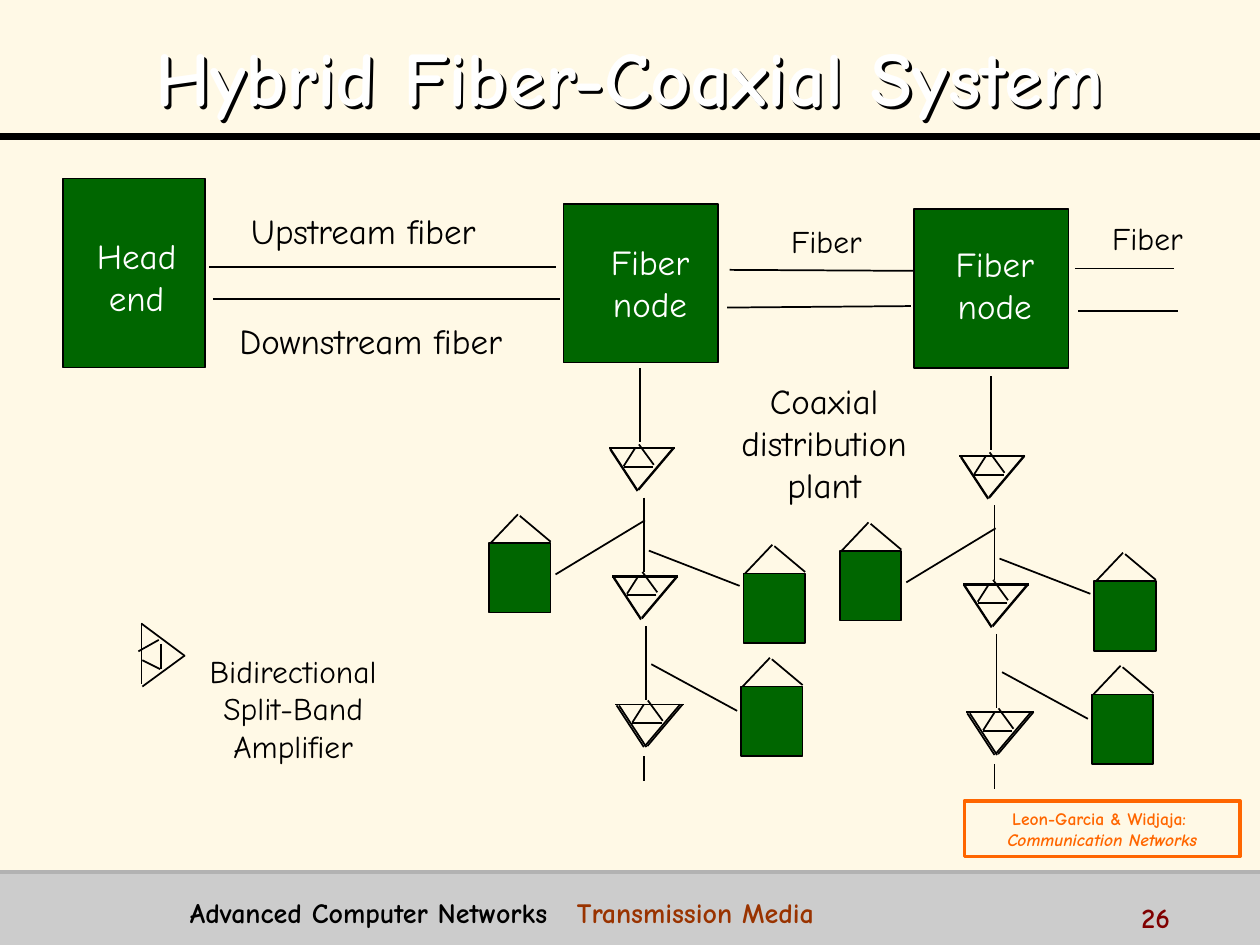
from lxml.etree import SubElement
from pptx import Presentation
from pptx.dml.color import RGBColor
from pptx.enum.shapes import MSO_CONNECTOR, MSO_SHAPE
from pptx.enum.text import MSO_ANCHOR, MSO_AUTO_SIZE, PP_ALIGN
from pptx.oxml.ns import qn
from pptx.util import Cm, Pt

CREAM = RGBColor(0xFF, 0xF9, 0xE6)
BLACK = RGBColor(0, 0, 0)
WHITE = RGBColor(0xFF, 0xFF, 0xFF)
GREEN = RGBColor(0, 0x66, 0)
SILVER = RGBColor(0xCC, 0xCC, 0xCC)
GREY = RGBColor(0xB2, 0xB2, 0xB2)
RUST = RGBColor(0x99, 0x33, 0)
MAROON = RGBColor(0x80, 0, 0)
ORANGE = RGBColor(0xFF, 0x66, 0)

PLANT_ORIGINS = [(0, 0), (7.07, 0.16)]
TRUNK = [
    (12.9, 7.42, 12.9, 8.92),
    (12.98, 10.03, 12.98, 11.53),
    (13.02, 12.62, 13.02, 14.12),
    (12.98, 15.24, 12.98, 15.75),
]
DROPS = [
    (14.86, 14.33, 13.13, 13.39),
    (11.2, 11.58, 13, 10.49),
    (13.08, 11.1, 14.91, 11.81),
]
OUTER_TRIANGLE = [(1.33, 0, 0, 0), (1.31, 0, 0.6, 0.84), (0.03, 0.02, 0.58, 0.86)]
INNER_TRIANGLE = [(0.89, 0.38, 0.3, 0.38), (0.91, 0.33, 0.61, -0.08), (0.53, 0, 0.3, 0.36)]
FORWARD_AMPLIFIERS = [(12.27, 9.02), (12.34, 11.63), (12.4, 14.2)]
REVERSE_AMPLIFIERS = [(12.27, 9.04), (12.34, 11.61), (12.45, 14.2)]
HOUSES = [(9.86, 10.95), (14.99, 11.56), (14.94, 13.84)]
ROOF = [(0.03, 0, 0.58, -0.58), (0.62, -0.55, 1.24, -0.03)]
FIBERS = [
    (4.22, 5.38, 11.2, 5.38),
    (4.29, 6.03, 11.28, 6.03),
    (14.71, 5.44, 18.42, 5.46),
    (14.66, 6.2, 18.36, 6.17),
    (21.67, 5.41, 23.67, 5.41),
    (21.74, 6.27, 23.75, 6.27),
]
LEGEND_AMPLIFIER = [
    (2.85, 12.55, 2.85, 13.79),
    (2.85, 12.57, 3.71, 13.21),
    (2.87, 13.84, 3.73, 13.21),
    (3.25, 12.98, 3.25, 13.49),
    (3.2, 12.9, 2.79, 13.13),
    (2.87, 13.31, 3.23, 13.49),
]
STATIONS = [(1.27, 3.6, 2.87, 3.81), (11.36, 4.11, 3.12, 3.2), (18.42, 4.22, 3.12, 3.2)]
LABELS = [
    (["Head", "end"], (1.6, 4.6, 2.31, 1.96), 20, WHITE),
    (["Fiber", "node"], (11.96, 4.72, 2.29, 1.96), 20, WHITE),
    (["Fiber", "node"], (18.91, 4.76, 2.29, 1.96), 20, WHITE),
    (["Upstream fiber"], (4.8, 4.09, 5.05, 1.14), 20, BLACK),
    (["Downstream fiber"], (4.48, 6.32, 5.99, 1.14), 20, BLACK),
    (["Coaxial", "distribution", "plant"], (14.62, 7.52, 3.99, 2.92), 20, BLACK),
    (["Bidirectional", "Split-Band", "Amplifier"], (3.88, 13.01, 4.06, 2.67), 18, BLACK),
    (["Fiber"], (15.68, 4.35, 1.96, 1.07), 18, BLACK),
    (["Fiber"], (22.15, 4.29, 1.96, 1.07), 18, BLACK),
]


class SlideBuilder:
    font_name = "Comic Neue"

    def __init__(self, slide):
        self.slide = slide

    def background(self, color):
        fill = self.slide.background.fill
        fill.solid()
        fill.fore_color.rgb = color

    def span(self, para, text, color, **formats):
        span = para.add_run()
        span.text = text
        for name, value in {"name": self.font_name, **formats}.items():
            setattr(span.font, name, value)
        span.font.color.rgb = color

    def title(self, text, area):
        title = self.slide.shapes.title
        for name, value in zip(("left", "top", "width", "height"), area):
            setattr(title, name, Cm(value))
        title.fill.background()
        effects = SubElement(title._element.spPr, qn("a:effectLst"))
        shadow = SubElement(effects, qn("a:outerShdw"), dist="25400", dir="2700000", algn="ctr")
        SubElement(shadow, qn("a:srgbClr"), val=str(BLACK))
        frame = title.text_frame
        frame.auto_size = MSO_AUTO_SIZE.NONE
        frame.vertical_anchor = MSO_ANCHOR.MIDDLE
        para = frame.paragraphs[0]
        para.alignment = PP_ALIGN.CENTER
        para.line_spacing = 1.1
        self.span(para, text, WHITE, size=Pt(44), bold=True)

    def box(self, area, fill=None, line=None, width=1):
        box = self.slide.shapes.add_shape(MSO_SHAPE.RECTANGLE, *map(Cm, area))
        box.shadow.inherit = False
        if fill is None:
            box.fill.background()
        else:
            box.fill.solid()
            box.fill.fore_color.rgb = fill
        if line is None:
            box.line.fill.background()
        else:
            box.line.color.rgb = line
            box.line.width = Pt(width)
        return box

    def text_box(self, area, wrap):
        box = self.slide.shapes.add_textbox(*map(Cm, area))
        box.text_frame.word_wrap = wrap
        return box.text_frame

    def label(self, lines, area, size, color):
        frame = self.text_box(area, False)
        for index, text in enumerate(lines):
            para = frame.add_paragraph() if index else frame.paragraphs[0]
            para.alignment = PP_ALIGN.CENTER
            self.span(para, text, color, size=Pt(size))

    def line(self, ends, color=BLACK, width=1):
        line = self.slide.shapes.add_connector(MSO_CONNECTOR.STRAIGHT, *map(Cm, ends))
        line.line.color.rgb = color
        line.line.width = Pt(width)
        SubElement(line._element.spPr, qn("a:effectLst"))

    def strokes(self, strokes, left=0, top=0):
        for x1, y1, x2, y2 in strokes:
            self.line((left + x1, top + y1, left + x2, top + y2))

    def house(self, left, top):
        self.box((left, top, 1.24, 1.4), GREEN, BLACK)
        self.strokes(ROOF, left, top)

    def plant(self, left, top):
        self.strokes(TRUNK + DROPS, left, top)
        for x, y in FORWARD_AMPLIFIERS:
            self.strokes(OUTER_TRIANGLE, left + x, top + y)
        for x, y in REVERSE_AMPLIFIERS:
            self.strokes(OUTER_TRIANGLE + INNER_TRIANGLE, left + x, top + y)
        for x, y in HOUSES:
            self.house(left + x, top + y)

    def footer(self):
        formats = {"size": Pt(16), "bold": True}
        para = self.text_box((3.58, 17.93, 18.49, 0.79), True).paragraphs[0]
        tabs = SubElement(para._p.get_or_add_pPr(), qn("a:tabLst"))
        SubElement(tabs, qn("a:tab"), pos=str(Cm(7.8)), algn="l")
        self.span(para, "Advanced Computer Networks\t", BLACK, **formats)
        self.span(para, "Transmission Media", RUST, **formats)
        number = self.text_box((22.76, 18.03, 2.54, 0.64), True).paragraphs[0]
        self.span(number, "26", MAROON, **formats)

    def citation(self, authors, book, area):
        frame = self.box(area, line=ORANGE, width=2).text_frame
        frame.word_wrap = True
        frame.vertical_anchor = MSO_ANCHOR.MIDDLE
        paras = (frame.paragraphs[0], frame.add_paragraph())
        for para, text, italic in zip(paras, (authors, book), (False, True)):
            para.alignment = PP_ALIGN.CENTER
            self.span(para, text, ORANGE, size=Pt(10), bold=True, italic=italic)


def main():
    deck = Presentation()
    deck.slide_width, deck.slide_height = Cm(25.4), Cm(19.05)
    page = SlideBuilder(deck.slides.add_slide(deck.slide_layouts[5]))
    page.background(CREAM)
    page.box((0, 17.58, 25.4, 1.47), SILVER)
    page.line((0, 2.75, 25.4, 2.75), width=4)
    page.line((0, 17.58, 25.4, 17.58), GREY, 2)
    page.title("Hybrid Fiber-Coaxial System", (0.5, 0.33, 24.4, 2.21))
    page.footer()
    for area in STATIONS:
        page.box(area, GREEN, BLACK)
    page.strokes(FIBERS + LEGEND_AMPLIFIER)
    for left, top in PLANT_ORIGINS:
        page.plant(left, top)
    for label in LABELS:
        page.label(*label)
    page.citation("Leon-Garcia & Widjaja: ", "Communication Networks", (19.44, 16.15, 5.56, 1.12))
    deck.save("out.pptx")


if __name__ == "__main__":
    main()
